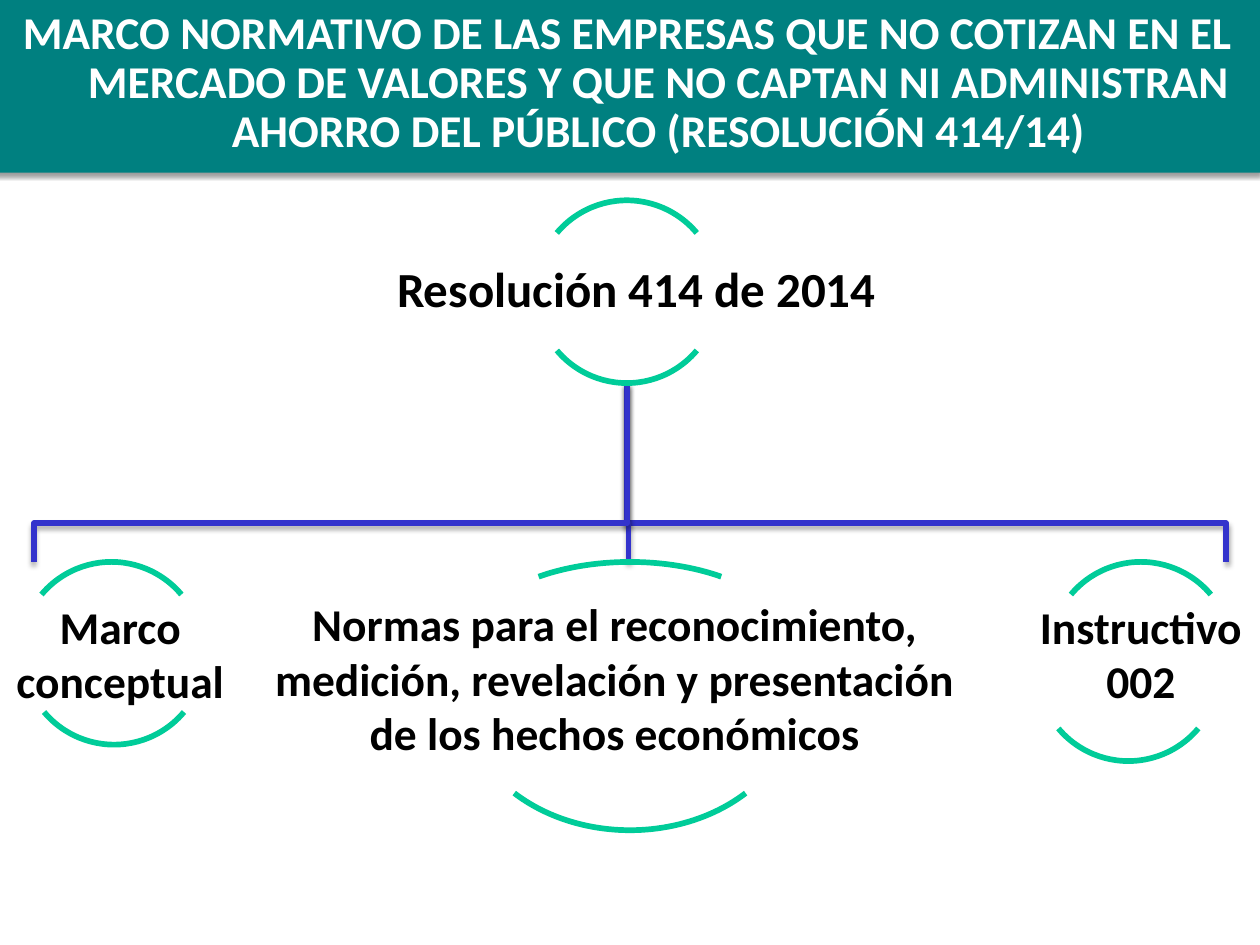
from dataclasses import dataclass

from lxml import etree
from pptx import Presentation
from pptx.dml.color import RGBColor
from pptx.enum.shapes import MSO_SHAPE
from pptx.enum.text import MSO_ANCHOR, PP_ALIGN
from pptx.oxml.ns import qn
from pptx.util import Inches, Pt

RECT, ARC = MSO_SHAPE.RECTANGLE, MSO_SHAPE.ARC
CENTER = PP_ALIGN.CENTER
TOP, MIDDLE = MSO_ANCHOR.TOP, MSO_ANCHOR.MIDDLE


@dataclass(frozen=True)
class Theme:
    font: str = "Calibri"
    body: int = 26
    root: int = 28
    band: RGBColor = RGBColor(0x00, 0x80, 0x80)
    arc: RGBColor = RGBColor(0x00, 0xCC, 0x99)
    branch: RGBColor = RGBColor(0x33, 0x33, 0xCC)
    light: RGBColor = RGBColor(0xFF, 0xFF, 0xFF)
    dark: RGBColor = RGBColor(0x00, 0x00, 0x00)


theme = Theme()
prs = Presentation()
prs.slide_width, prs.slide_height = Inches(10), Inches(7.5)
s = prs.slides.add_slide(prs.slide_layouts[6])


def add_text(box, lines, size=theme.body, color=theme.dark, anchor=MIDDLE,
             inset=0.01, spacing=1.0, hanging=0):
    tf = s.shapes.add_textbox(*map(Inches, box)).text_frame
    tf.word_wrap = True
    tf.vertical_anchor = anchor
    if inset is not None:
        tf.margin_left = tf.margin_right = Inches(inset)
        tf.margin_top = tf.margin_bottom = Inches(inset)
    for i, line in enumerate(lines):
        p = tf.paragraphs[0] if i == 0 else tf.add_paragraph()
        p.alignment = CENTER
        p.line_spacing = spacing
        if hanging:
            pPr = p._p.get_or_add_pPr()
            pPr.set("marL", str(Inches(hanging)))
            pPr.set("indent", str(-Inches(hanging)))
        r = p.add_run()
        r.text = line
        r.font.name, r.font.size, r.font.bold = theme.font, Pt(size), True
        r.font.color.rgb = color


def add_shadow(sp, distance, opacity):
    sp.shadow.inherit = False
    effects = sp._element.spPr.find(qn("a:effectLst"))
    shadow = etree.SubElement(effects, qn("a:outerShdw"), blurRad=str(Pt(3.1)),
                              dist=str(Pt(distance)), dir="5400000", rotWithShape="0")
    black = etree.SubElement(shadow, qn("a:srgbClr"), val="000000")
    etree.SubElement(black, qn("a:alpha"), val=str(opacity * 1000))


# Title band
band = s.shapes.add_shape(RECT, Inches(-0.04), Inches(-0.03), Inches(10.04), Inches(1.4))
band.fill.solid()
band.fill.fore_color.rgb = theme.band
band.line.fill.background()
add_shadow(band, 1.6, 38)
add_text((-0.03, 0.03, 10.03, 1.28),
         ["MARCO NORMATIVO DE LAS EMPRESAS QUE NO COTIZAN EN EL MERCADO DE VALORES "
          "Y QUE NO CAPTAN NI ADMINISTRAN AHORRO DEL PÚBLICO (RESOLUCIÓN 414/14)"],
         color=theme.light, anchor=TOP, inset=None, spacing=0.9, hanging=0.49)

# Branches from the root down to each child: (start x, end x)
TRUNK_TOP, BUS, CHILD_TOP = 3.04, 4.15, 4.46
for start, end in [(4.98, 9.73), (4.97, 4.99), (4.98, 0.27)]:
    builder = s.shapes.build_freeform(Inches(start), Inches(TRUNK_TOP))
    builder.add_line_segments([(Inches(x), Inches(y)) for x, y in
                               [(start, BUS), (end, BUS), (end, CHILD_TOP)]], close=False)
    sp = builder.convert_to_shape()
    sp.fill.background()
    sp.line.color.rgb, sp.line.width = theme.branch, Pt(3)
    add_shadow(sp, 1.8, 35)

# Nodes: upper arc box, lower arc box, text box, lines, size, line spacing
D = 1.45
nodes = [
    ((4.25, 1.59, D, D), (4.25, 1.59, D, D), (2.97, 1.85, 4.16, 0.93),
     ["Resolución 414 de 2014"], theme.root, 0.9),
    ((0.16, CHILD_TOP, D, D), (0.18, CHILD_TOP, D, D), (-0.5, 4.72, 2.91, 0.93),
     ["Marco", "conceptual"], theme.body, 1.0),
    ((3.67, CHILD_TOP, 2.66, D), (3.67, CHILD_TOP, 2.66, 2.13), (2.09, 4.72, 5.58, 1.32),
     ["Normas para el reconocimiento,", "medición, revelación y presentación",
      "de los hechos económicos"], theme.body, 1.0),
    ((8.33, CHILD_TOP, D, D), (8.23, 4.59, D, D), (7.6, 4.72, 2.91, 0.93),
     ["Instructivo", "002"], theme.body, 1.0),
]
ANGLE_UNIT = 0.6  # one degree, as an arc adjustment value
for upper, lower, box, lines, size, spacing in nodes:
    for arc_box, start, end in [(upper, 220, 320), (lower, 40, 140)]:
        sp = s.shapes.add_shape(ARC, *map(Inches, arc_box))
        sp.adjustments[0], sp.adjustments[1] = start * ANGLE_UNIT, end * ANGLE_UNIT
        sp.fill.background()
        sp.line.color.rgb, sp.line.width = theme.arc, Pt(3.25)
        sp.shadow.inherit = False
    add_text(box, lines, size=size, spacing=spacing)

prs.save("out.pptx")
